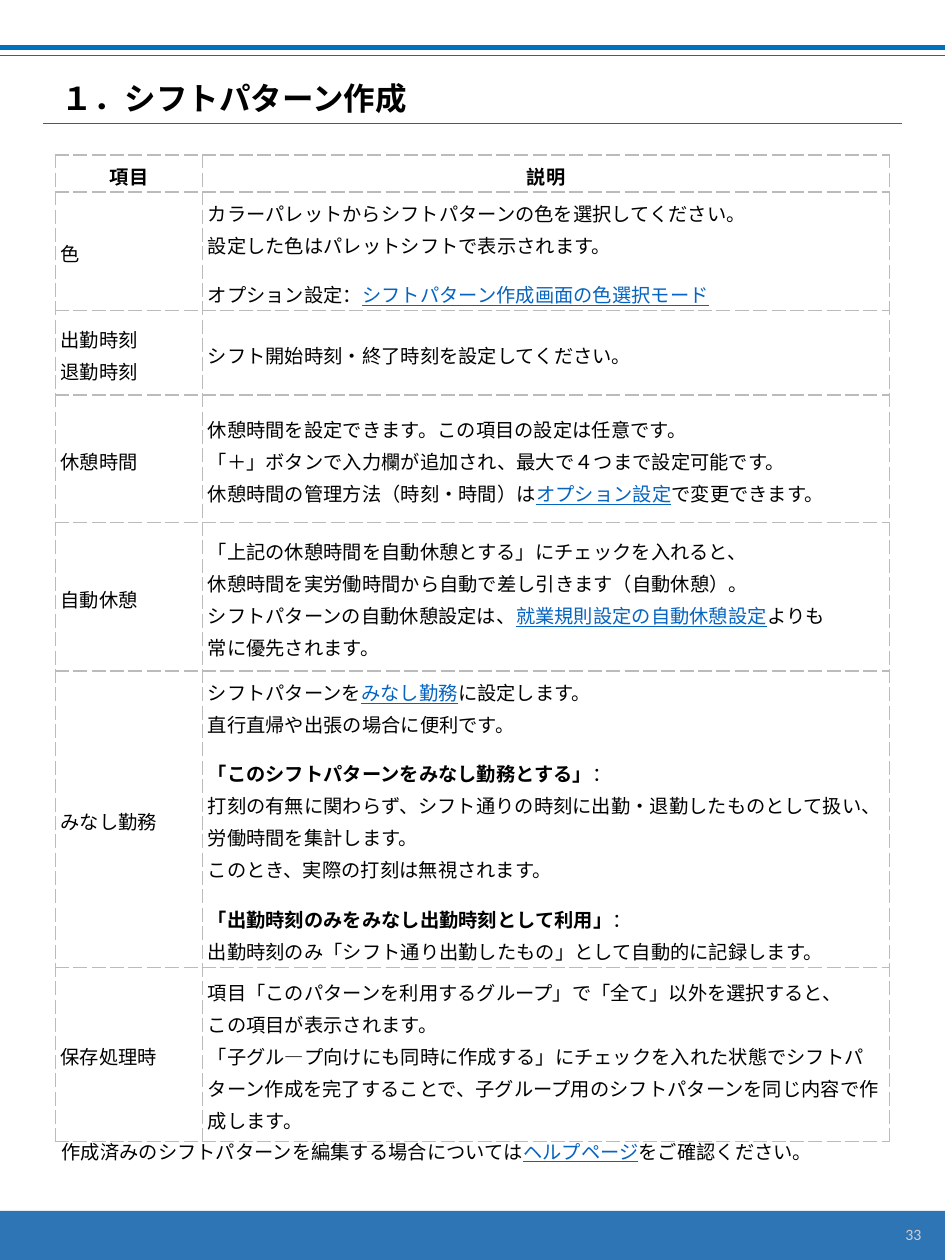
from lxml.etree import SubElement
from pptx import Presentation
from pptx.dml.color import RGBColor
from pptx.enum.shapes import MSO_CONNECTOR, MSO_SHAPE
from pptx.enum.text import MSO_ANCHOR, PP_ALIGN
from pptx.oxml import parse_xml
from pptx.oxml.ns import nsdecls, qn
from pptx.util import Inches, Pt

COLORS = {"text": "000000", "link": "0563C1", "rule": "0070C0",
          "footer": "2E75B5", "number": "D0CECE", "border": "BBBBBB"}

# Looks of a run
PLAIN = {}
BOLD = {"bold": True}
LINK = {"underline": True, "color": "link"}

COLUMN_WIDTHS = [1.17, 5.45]
ROW_HEIGHTS = [0.29, 0.91, 0.67, 1.01, 1.18, 2.13, 1.38]
LINE_PITCH = Pt(18.3)
HEADINGS = ["項目", "説明"]

# Each item: its name, then paragraphs made of (text, look) pieces
ITEMS = [
    ("色", [
        [("カラーパレットからシフトパターンの色を選択してください。\n"
          "設定した色はパレットシフトで表示されます。", PLAIN)],
        [("オプション設定：", PLAIN), ("シフトパターン作成画面の色選択モード", LINK)],
    ]),
    ("出勤時刻\n退勤時刻", [
        [("シフト開始時刻・終了時刻を設定してください。", PLAIN)],
    ]),
    ("休憩時間", [
        [("休憩時間を設定できます。この項目の設定は任意です。\n"
          "「＋」ボタンで入力欄が追加され、最大で４つまで設定可能です。\n"
          "休憩時間の管理方法（時刻・時間）は", PLAIN),
         ("オプション設定", LINK), ("で変更できます。", PLAIN)],
    ]),
    ("自動休憩", [
        [("「上記の休憩時間を自動休憩とする」にチェックを入れると、\n"
          "休憩時間を実労働時間から自動で差し引きます（自動休憩）。\n"
          "シフトパターンの自動休憩設定は、", PLAIN),
         ("就業規則設定の自動休憩設定", LINK),
         ("よりも\n常に優先されます。", PLAIN)],
    ]),
    ("みなし勤務", [
        [("シフトパターンを", PLAIN), ("みなし勤務", LINK),
         ("に設定します。\n直行直帰や出張の場合に便利です。", PLAIN)],
        [("「このシフトパターンをみなし勤務とする」", BOLD),
         ("：\n打刻の有無に関わらず、シフト通りの時刻に出勤・退勤したものとして扱い、\n"
          "労働時間を集計します。\nこのとき、実際の打刻は無視されます。", PLAIN)],
        [("「出勤時刻のみをみなし出勤時刻として利用」", BOLD),
         ("：\n出勤時刻のみ「シフト通り出勤したもの」として自動的に記録します。", PLAIN)],
    ]),
    ("保存処理時", [
        [("項目「このパターンを利用するグループ」で「全て」以外を選択すると、\n"
          "この項目が表示されます。\n"
          "「子グル―プ向けにも同時に作成する」にチェックを入れた状態でシフトパターン作成を"
          "完了することで、子グループ用のシフトパターンを同じ内容で作成します。", PLAIN)],
    ]),
]


def rgb(name):
    return RGBColor.from_string(COLORS[name])


def set_values(target, values):
    for name, value in values.items():
        setattr(target, name, value)


def write_pieces(paragraph, pieces, size=11, font="Arial", east_asian=None):
    """Add the pieces as runs, with a line break at each newline."""
    for text, look in pieces:
        for number, line in enumerate(text.split("\n")):
            if number:
                paragraph.add_line_break()
            run = paragraph.add_run()
            run.text = line
            values = {"size": Pt(size), "name": font, **look}
            run.font.color.rgb = rgb(values.pop("color", "text"))
            set_values(run.font, values)
            if east_asian:
                SubElement(run.font._element, qn("a:ea")).set("typeface", east_asian)


def add_text(slide, box, pieces, frame_format=PLAIN, paragraph_format=PLAIN, **font):
    frame = slide.shapes.add_textbox(*map(Inches, box)).text_frame
    set_values(frame, {"word_wrap": True, **frame_format})
    set_values(frame.paragraphs[0], paragraph_format)
    write_pieces(frame.paragraphs[0], pieces, east_asian="Arial", **font)


def add_rule(slide, left, right, y, width=0.75):
    rule = slide.shapes.add_connector(
        MSO_CONNECTOR.STRAIGHT, *map(Inches, (left, y, right, y)))
    rule.line.color.rgb = rgb("rule")
    rule.line.width = Pt(width)
    SubElement(rule._element.spPr, qn("a:effectLst"))


def add_borders(cell):
    properties = cell._tc.get_or_add_tcPr()
    for position, side in enumerate("LRTB"):
        properties.insert(position, parse_xml(
            f'<a:ln{side} {nsdecls("a")} w="{Pt(0.75)}"><a:solidFill>'
            f'<a:srgbClr val="{COLORS["border"]}"/></a:solidFill>'
            f'<a:prstDash val="dash"/></a:ln{side}>'))


def fill_cell(cell, paragraphs, align=PP_ALIGN.LEFT):
    set_values(cell, {
        "vertical_anchor": MSO_ANCHOR.MIDDLE,
        "margin_left": Inches(0.04), "margin_right": Inches(0.04),
        "margin_top": Inches(0.02), "margin_bottom": Inches(0.02)})
    cell.fill.background()
    add_borders(cell)
    frame = cell.text_frame
    last = len(paragraphs) - 1
    for number, pieces in enumerate(paragraphs):
        paragraph = frame.add_paragraph() if number else frame.paragraphs[0]
        set_values(paragraph, {
            "alignment": align, "line_spacing": LINE_PITCH,
            "space_before": Pt(10 if number else 0),
            "space_after": Pt(10 if number == last else 0)})
        write_pieces(paragraph, pieces)


def add_items_table(slide):
    table = slide.shapes.add_table(
        len(ROW_HEIGHTS), len(COLUMN_WIDTHS), Inches(0.44), Inches(1.23),
        Inches(sum(COLUMN_WIDTHS)), Inches(sum(ROW_HEIGHTS))).table
    set_values(table, {"first_row": False, "horz_banding": False})
    for column, width in zip(table.columns, COLUMN_WIDTHS):
        column.width = Inches(width)
    for row, height in zip(table.rows, ROW_HEIGHTS):
        row.height = Inches(height)
    for column, heading in enumerate(HEADINGS):
        fill_cell(table.cell(0, column), [[(heading, BOLD)]], PP_ALIGN.CENTER)
    for row, (item, description) in enumerate(ITEMS, start=1):
        fill_cell(table.cell(row, 0), [[(item, PLAIN)]])
        fill_cell(table.cell(row, 1), description)


def add_footer_band(slide):
    band = slide.shapes.add_shape(
        MSO_SHAPE.RECTANGLE, *map(Inches, (0, 9.61, 7.5, 0.39)))
    band.shadow.inherit = False
    band.fill.solid()
    band.fill.fore_color.rgb = rgb("footer")
    band.line.fill.background()


def main():
    deck = Presentation()
    set_values(deck, {"slide_width": Inches(7.5), "slide_height": Inches(10)})
    slide = deck.slides.add_slide(deck.slide_layouts[6])

    # Page frame
    add_footer_band(slide)
    add_rule(slide, 0, 7.5, 0.38, width=3)
    add_rule(slide, 0, 7.5, 0.44)

    # Items and their descriptions
    add_items_table(slide)

    # Page number
    add_text(slide, (5.72, 9.61, 1.69, 0.37), [("33", {"color": "number"})],
             {"vertical_anchor": MSO_ANCHOR.MIDDLE},
             {"alignment": PP_ALIGN.RIGHT}, size=9, font="Calibri")

    # Title with its rule
    add_text(slide, (0.39, 0.53, 6.83, 0.45), [("１．シフトパターン作成", BOLD)],
             {"vertical_anchor": MSO_ANCHOR.BOTTOM}, {"line_spacing": 1.08}, size=18)
    add_rule(slide, 0.34, 7.16, 0.98)

    # Closing note
    add_text(slide, (0.39, 8.96, 6.71, 0.38),
             [("作成済みのシフトパターンを編集する場合については", PLAIN),
              ("ヘルプページ", LINK), ("をご確認ください。", PLAIN)],
             {"margin_top": Inches(0.1), "margin_bottom": Inches(0.1)})

    deck.save("out.pptx")


if __name__ == "__main__":
    main()
